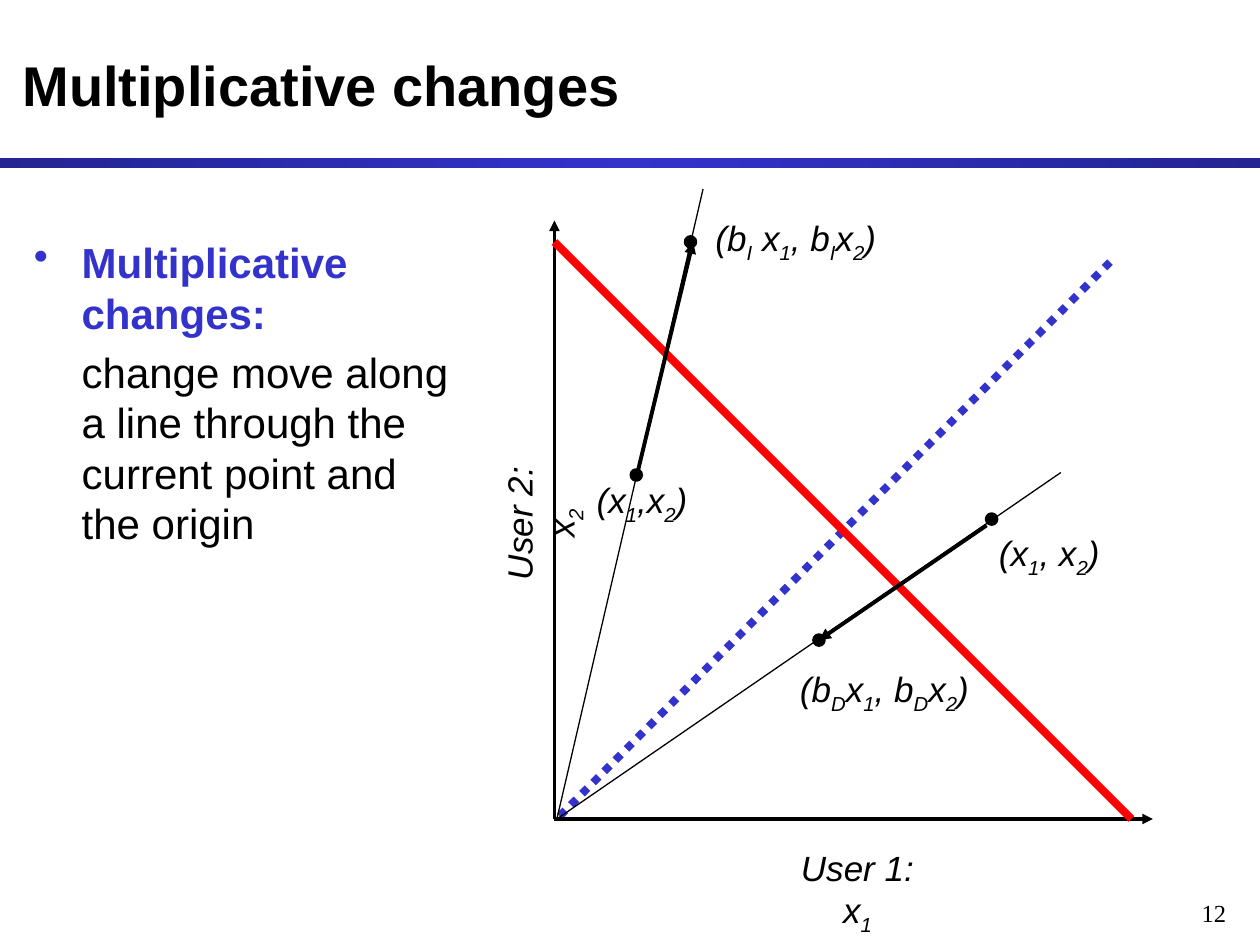
from copy import deepcopy

from lxml import etree
from pptx import Presentation
from pptx.dml.color import RGBColor
from pptx.enum.dml import MSO_LINE
from pptx.enum.shapes import MSO_CONNECTOR, MSO_SHAPE
from pptx.enum.text import MSO_ANCHOR, PP_ALIGN
from pptx.oxml.ns import qn
from pptx.util import Inches, Pt

STRAIGHT = MSO_CONNECTOR.STRAIGHT
RECTANGLE, OVAL = MSO_SHAPE.RECTANGLE, MSO_SHAPE.OVAL
DOTTED = MSO_LINE.ROUND_DOT
TOP, MIDDLE = MSO_ANCHOR.TOP, MSO_ANCHOR.MIDDLE
LEFT, CENTER, RIGHT = PP_ALIGN.LEFT, PP_ALIGN.CENTER, PP_ALIGN.RIGHT

BLACK, BLUE, NAVY, RED = "000000", "3333CC", "242492", "FF0000"
DOT_SIZE = 0.08
LABEL_HEIGHT = 0.43


def rgb(value):
    return RGBColor.from_string(value)


def add_header_bar(slide):
    bar = slide.shapes.add_shape(RECTANGLE, 0, Inches(1.25), Inches(10), Inches(0.08))
    bar.shadow.inherit = False
    bar.line.fill.background()
    bar.fill.gradient()
    bar.fill.gradient_angle = 0
    stop_list = bar._element.spPr.find(".//" + qn("a:gsLst"))
    stop_list.append(deepcopy(stop_list[-1]))
    stops = ((0, NAVY), (0.5, BLUE), (1, NAVY))
    for stop, (position, color) in zip(bar.fill.gradient_stops, stops):
        stop.position = position
        stop.color.rgb = rgb(color)


def add_line(slide, start, end, width, color=BLACK, arrow=False, dash=None):
    line = slide.shapes.add_connector(STRAIGHT, *map(Inches, start + end))
    line.line.color.rgb = rgb(color)
    line.line.width = Pt(width)
    if dash is not None:
        line.line.dash_style = dash
    if arrow:
        etree.SubElement(line.line._get_or_add_ln(), qn("a:tailEnd"), type="triangle")
    etree.SubElement(line._element.spPr, qn("a:effectLst"))


def add_dot(slide, center):
    left, top = (Inches(value - DOT_SIZE / 2) for value in center)
    dot = slide.shapes.add_shape(OVAL, left, top, Inches(DOT_SIZE), Inches(DOT_SIZE))
    dot.shadow.inherit = False
    dot.fill.solid()
    dot.fill.fore_color.rgb = rgb(BLACK)
    dot.line.color.rgb = rgb(BLACK)
    dot.line.width = Pt(2)


def add_frame(slide, box, anchor=TOP):
    frame_box = slide.shapes.add_textbox(*map(Inches, box))
    frame_box.text_frame.word_wrap = True
    frame_box.text_frame.vertical_anchor = anchor
    return frame_box


def style(paragraph, size, color=BLACK, font="Arial", align=LEFT, bold=False, italic=False):
    paragraph.alignment = align
    paragraph.font.name = font
    paragraph.font.size = Pt(size)
    paragraph.font.color.rgb = rgb(color)
    paragraph.font.bold = bold
    paragraph.font.italic = italic


def add_text(slide, box, text, size, anchor=TOP, **look):
    paragraph = add_frame(slide, box, anchor).text_frame.paragraphs[0]
    paragraph.text = text
    style(paragraph, size, **look)


def add_formula(slide, left, top, width, formula, align=LEFT, rotation=0):
    """Write an italic label; the character after each underscore is a subscript."""
    label = add_frame(slide, (left, top, width, LABEL_HEIGHT))
    label.rotation = rotation
    paragraph = label.text_frame.paragraphs[0]
    opening, *rest = formula.split("_")
    paragraph.add_run().text = opening
    for part in rest:
        subscript = paragraph.add_run()
        subscript.text = part[0]
        subscript._r.get_or_add_rPr().set("baseline", "-25000")
        if part[1:]:
            paragraph.add_run().text = part[1:]
    style(paragraph, 20, align=align, italic=True)


def add_explanation(slide):
    frame = add_frame(slide, (0.17, 1.83, 3.5, 3.42)).text_frame
    heading, detail = frame.paragraphs[0], frame.add_paragraph()
    heading.text = "Multiplicative changes:"
    style(heading, 24, color=BLUE, bold=True)
    detail.text = "change move along a line through the current point and the origin"
    style(detail, 24)
    for paragraph in (heading, detail):
        paragraph.space_before = Pt(5)
        paragraph._p.get_or_add_pPr().set("marL", str(Inches(0.38)))
    properties = heading._p.get_or_add_pPr()
    properties.set("indent", str(Inches(-0.38)))
    bullet = etree.Element(qn("a:buChar"), char="•")
    properties.find(qn("a:defRPr")).addprevious(bullet)


def add_diagram(slide):
    origin = (4.4, 6.5)
    ray_start = (4.42, 6.5)
    increase_start, increase_end = (5.05, 3.77), (5.48, 1.92)
    decrease_start, decrease_end = (7.87, 4.12), (6.5, 5.08)

    add_line(slide, origin, (4.4, 1.75), 2, arrow=True)
    add_formula(slide, 6.15, 6.67, 1.31, "User 1: x_1", CENTER)
    add_line(slide, (8.81, 2.08), (4.4, 6.52), 4.5, BLUE, dash=DOTTED)
    add_line(slide, origin, (9.15, 6.5), 2, arrow=True)
    add_line(slide, (4.4, 1.92), (8.98, 6.5), 4.5, RED)
    add_formula(slide, 3.46, 3.94, 1.31, "User 2: x_2", CENTER, rotation=270)

    add_line(slide, (5.06, 3.75), (5.5, 1.92), 2.25, arrow=True)
    add_line(slide, ray_start, (5.58, 1.5), 0.75)
    add_line(slide, (7.83, 4.17), decrease_end, 2.25, arrow=True)
    add_line(slide, ray_start, (8.42, 3.75), 0.75)
    for point in (increase_start, increase_end, decrease_start, decrease_end):
        add_dot(slide, point)

    add_formula(slide, 4.4, 3.75, 1.39, "(x_1,x_2)", CENTER)
    add_formula(slide, 5.58, 1.67, 1.92, "(b_I x_1, b_Ix_2)")
    add_formula(slide, 7.83, 4.17, 1.92, "(x_1, x_2)")
    add_formula(slide, 6.25, 5.25, 1.92, "(b_Dx_1, b_Dx_2)")


def main():
    presentation = Presentation()
    presentation.slide_width, presentation.slide_height = Inches(10), Inches(7.5)
    slide = presentation.slides.add_slide(presentation.slide_layouts[6])
    add_header_bar(slide)
    add_text(slide, (0.08, 0.17, 9.83, 1), "Multiplicative changes", 32, MIDDLE, bold=True)
    add_explanation(slide)
    add_diagram(slide)
    add_text(slide, (7.75, 7.08, 2.08, 0.25), "12", 14, font="Times New Roman", align=RIGHT)
    presentation.save("out.pptx")


if __name__ == "__main__":
    main()
